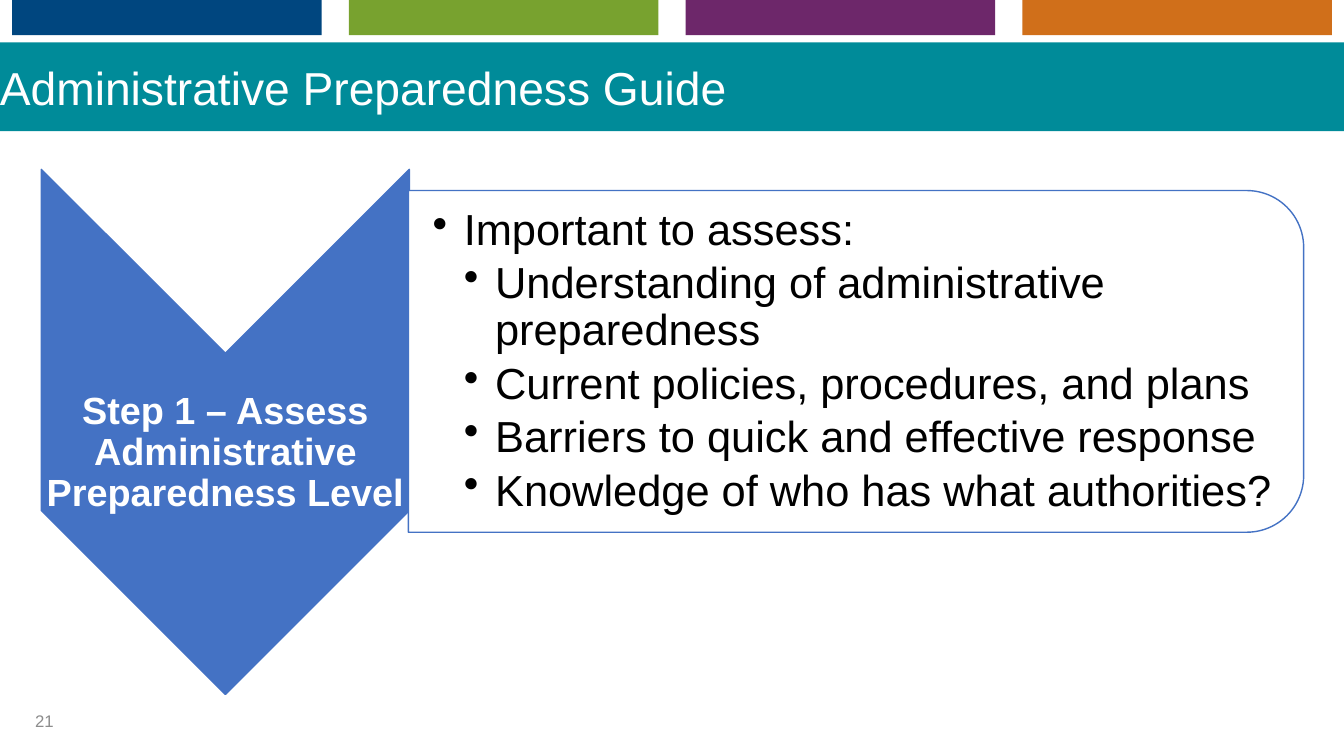
from dataclasses import dataclass

from lxml import etree
from pptx import Presentation
from pptx.dml.color import RGBColor
from pptx.enum.shapes import MSO_SHAPE
from pptx.enum.text import MSO_ANCHOR, PP_ALIGN
from pptx.oxml.ns import qn
from pptx.util import Inches, Pt

RECT, CHEVRON = MSO_SHAPE.RECTANGLE, MSO_SHAPE.CHEVRON
ROUND_TOP = MSO_SHAPE.ROUND_2_SAME_RECTANGLE
TOP, MIDDLE = MSO_ANCHOR.TOP, MSO_ANCHOR.MIDDLE
LEFT, CENTER = PP_ALIGN.LEFT, PP_ALIGN.CENTER


@dataclass(frozen=True)
class Theme:
    font: str = "Arial"
    teal: str = "008B99"
    blue: str = "4472C4"
    white: str = "FFFFFF"
    black: str = "000000"
    gray: str = "8C8C8C"
    strip: tuple = ("00467F", "78A22F", "6D276A", "D06F1A")
    title_size: int = 33
    step_size: int = 27
    bullet_size: int = 31
    number_size: int = 12


THEME = Theme()
POINTS = [
    (1, "Important to assess:"),
    (2, "Understanding of administrative preparedness"),
    (2, "Current policies, procedures, and plans"),
    (2, "Barriers to quick and effective response"),
    (2, "Knowledge of who has what authorities?"),
]


def add_shape(s, kind, x, y, w, h, fill, line=None, turned=False):
    """Fill the given box; a turned shape is rotated 90 degrees within it."""
    if turned:
        x, y, w, h = x + (w - h) / 2, y + (h - w) / 2, h, w
    sp = s.shapes.add_shape(kind, Inches(x), Inches(y), Inches(w), Inches(h))
    sp.rotation = 90 if turned else 0
    sp.shadow.inherit = False
    sp.fill.solid()
    sp.fill.fore_color.rgb = RGBColor.from_string(fill)
    if line:
        sp.line.color.rgb = RGBColor.from_string(line)
        sp.line.width = Pt(1)
    else:
        sp.line.fill.background()


def add_text_box(s, x, y, w, h, anchor=MIDDLE, insets=(0.1, 0.05, 0.1, 0.05)):
    tf = s.shapes.add_textbox(Inches(x), Inches(y), Inches(w), Inches(h)).text_frame
    tf.word_wrap = True
    tf.vertical_anchor = anchor
    tf.margin_left, tf.margin_top, tf.margin_right, tf.margin_bottom = map(Inches, insets)
    return tf


def add_run(p, text, size, color, bold=False):
    r = p.add_run()
    r.text = text
    r.font.name = THEME.font
    r.font.size = Pt(size)
    r.font.bold = bold
    r.font.color.rgb = RGBColor.from_string(color)


def set_bullet(p, level, step=0.31):
    pPr = p._p.get_or_add_pPr()
    pPr.set("marL", str(Inches(step * level)))
    pPr.set("indent", str(Inches(-step)))
    etree.SubElement(pPr, qn("a:buChar")).set("char", "•")


def add_header(s, x, y, w):
    # Colour strip
    for i, color in enumerate(THEME.strip):
        add_shape(s, RECT, x + 0.12 + 3.34 * i, y, 3.07, 0.35, color)
    # Title band
    add_shape(s, RECT, x, y + 0.42, w, 0.88, THEME.teal)
    tf = add_text_box(s, x - 0.1, y + 0.54, w - 0.15, 0.66, TOP)
    add_run(tf.paragraphs[0], "Administrative Preparedness Guide",
            THEME.title_size, THEME.white)


def add_step(s, x, y, w, h):
    add_shape(s, CHEVRON, x, y, w, h, THEME.blue, THEME.blue, turned=True)
    # Label between the notch and the point
    notch = w / 2
    tf = add_text_box(s, x, y + notch + 0.21, w, h - 2 * notch, insets=[0.02] * 4)
    p = tf.paragraphs[0]
    p.alignment = CENTER
    p.line_spacing = 0.9
    add_run(p, "Step 1 – Assess Administrative Preparedness Level",
            THEME.step_size, THEME.white, bold=True)


def add_points(s, x, y, w, h):
    add_shape(s, ROUND_TOP, x, y, w, h, THEME.white, THEME.blue, turned=True)
    # Bullets inside the panel
    tf = add_text_box(s, x, y + 0.17, w - 0.17, h - 0.33,
                      insets=(0.24, 0.02, 0.02, 0.02))
    for i, (level, text) in enumerate(POINTS):
        p = tf.add_paragraph() if i else tf.paragraphs[0]
        p.level = level
        p.alignment = LEFT
        p.line_spacing = 0.9
        p.space_after = Pt(0.15 * THEME.bullet_size)
        set_bullet(p, level)
        add_run(p, text, THEME.bullet_size, THEME.black)


def add_slide_number(s, x, y, w, h):
    tf = add_text_box(s, x, y, w, h)
    add_run(tf.paragraphs[0], "21", THEME.number_size, THEME.gray)


def main():
    prs = Presentation()
    prs.slide_width, prs.slide_height = Inches(13.33), Inches(7.5)
    s = prs.slides.add_slide(prs.slide_layouts[6])
    add_header(s, 0, 0, 13.33)
    add_step(s, 0.41, 1.68, 3.65, 5.21)
    add_points(s, 4.05, 1.89, 8.88, 3.39)
    add_slide_number(s, 0.25, 6.95, 3, 0.4)
    prs.save("out.pptx")


if __name__ == "__main__":
    main()
